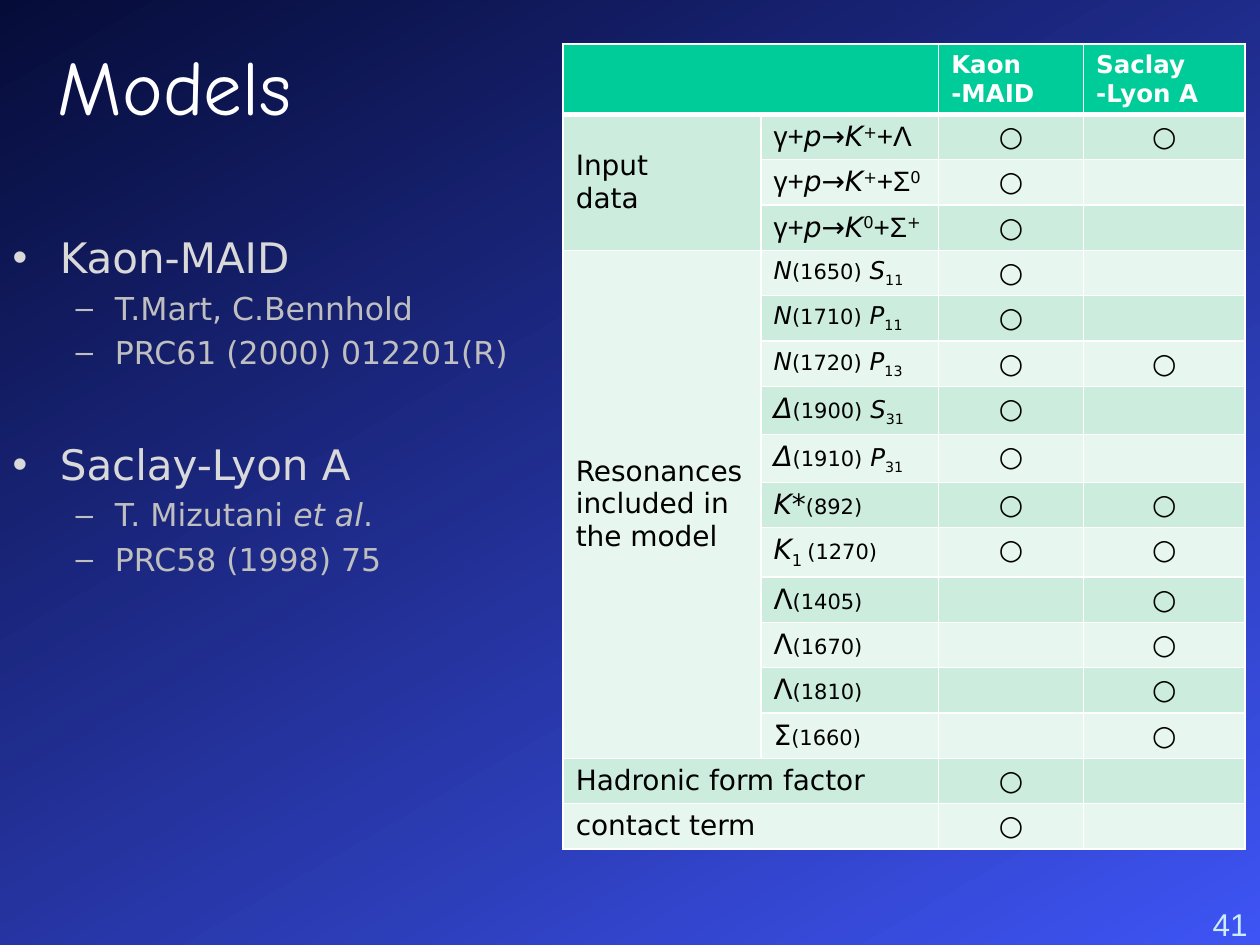
"""Build a slide that compares the inputs of two kaon models."""
from typing import NamedTuple

from lxml.etree import SubElement
from pptx import Presentation
from pptx.dml.color import RGBColor
from pptx.enum.text import MSO_ANCHOR, MSO_AUTO_SIZE, PP_ALIGN
from pptx.oxml.ns import qn
from pptx.util import Inches, Pt

SANS = "DejaVu Sans"
BLACK, WHITE = "000000", "FFFFFF"
HEAD, DARK, LIGHT = "00CC99", "CCECDE", "E7F6EF"
WIDTHS = [1.57, 1.41, 1.15, 1.28]
LOW = 0.36


class Run(NamedTuple):
    text: str
    size: int = 16
    slant: bool = False
    base: int = 0
    font: str = SANS
    color: str = BLACK
    bold: bool = False


class Row(NamedTuple):
    runs: list[Run]
    marks: str
    high: float = LOW


class Item(NamedTuple):
    level: int
    runs: list[Run]
    gap: float | None = None


def paint(target, color: str) -> None:
    target.rgb = RGBColor.from_string(color)


def write(para, runs: list[Run]) -> None:
    for part in runs:
        run = para.add_run()
        run.text = part.text
        font = run.font
        font.size, font.name = Pt(part.size), part.font
        font.italic, font.bold = part.slant, part.bold
        paint(font.color, part.color)
        if part.base:
            font._element.set("baseline", str(part.base * 1000))


def place(shape, left: float, top: float, width: float, height: float) -> None:
    shape.left, shape.top = Inches(left), Inches(top)
    shape.width, shape.height = Inches(width), Inches(height)


def style(cell, color: str, under: int) -> None:
    props = cell._tc.get_or_add_tcPr()
    for side, width in (("L", 1), ("R", 1), ("T", 1), ("B", under)):
        line = SubElement(props, qn(f"a:ln{side}"), w=str(Pt(width)))
        fill = SubElement(line, qn("a:solidFill"))
        SubElement(fill, qn("a:srgbClr"), val=WHITE)
    cell.fill.solid()
    paint(cell.fill.fore_color, color)
    end = cell.text_frame.paragraphs[0]._p.get_or_add_endParaRPr()
    end.set("sz", "1400")


def fill_cell(cell, lines: list[list[Run]], align=PP_ALIGN.LEFT) -> None:
    frame = cell.text_frame
    for num, runs in enumerate(lines):
        para = frame.add_paragraph() if num else frame.paragraphs[0]
        para.alignment = align
        write(para, runs)


def decay(kaon: str, name: str, charge: str = "") -> list[Run]:
    runs = [Run("γ+", font="Arial"), Run("p", slant=True), Run("→"),
            Run("K", slant=True), Run(kaon, base=30), Run("+" + name, font="Arial")]
    return runs + [Run(charge, base=30)] if charge else runs


def state(name: str, mass: str, wave: str, sub: str, size: int = 14) -> list[Run]:
    return [Run(name, size, True), Run(f"({mass})", 12), Run(" ", 14),
            Run(wave, 14, True), Run(sub, 14, base=-25)]


def heavy(name: str, mass: str) -> list[Run]:
    return [Run(name), Run(f"({mass})", 12)]


ROWS = [
    Row(decay("+", "Λ"), "○○"),
    Row(decay("+", "Σ", "0"), "○ "),
    Row(decay("0", "Σ", "+"), "○ "),
    Row(state("N", "1650", "S", "11"), "○ "),
    Row(state("N", "1710", "P", "11"), "○ "),
    Row(state("N", "1720", "P", "13"), "○○"),
    Row(state("Δ", "1900", "S", "31", 16), "○ ", 0.38),
    Row(state("Δ", "1910", "P", "31", 16), "○ ", 0.38),
    Row([Run("K", slant=True), Run("*"), Run("(892)", 12)], "○○"),
    Row([Run("K", slant=True), Run("1 ", base=-25), Run("(1270)", 12)], "○○", 0.39),
    Row(heavy("Λ", "1405"), " ○"),
    Row(heavy("Λ", "1670"), " ○"),
    Row(heavy("Λ", "1810"), " ○"),
    Row(heavy("Σ", "1660"), " ○"),
    Row([], "○ "),
    Row([], "○ "),
]
GROUPS = [
    ((0, 0), (0, 1), []),
    ((1, 0), (3, 0), ["Input", "data"]),
    ((4, 0), (14, 0), ["Resonances", "included in the model"]),
    ((15, 0), (15, 1), ["Hadronic form factor"]),
    ((16, 0), (16, 1), ["contact term"]),
]


def add_grid(slide) -> None:
    highs = [0.55] + [row.high for row in ROWS]
    grid = slide.shapes.add_table(
        len(highs), len(WIDTHS), Inches(4.47), Inches(0.35),
        Inches(sum(WIDTHS)), Inches(sum(highs))).table
    grid.horz_banding = False
    for col, width in zip(grid.columns, WIDTHS):
        col.width = Inches(width)
    for num, high in enumerate(highs):
        grid.rows[num].height = Inches(high)
        color = (DARK if num % 2 else LIGHT) if num else HEAD
        for cell in grid.rows[num].cells:
            style(cell, color, 1 if num else 3)
    for first, last, lines in GROUPS:
        cell = grid.cell(*first)
        cell.merge(grid.cell(*last))
        fill_cell(cell, [[Run(line)] for line in lines])
        if last[0] > first[0]:
            cell.vertical_anchor = MSO_ANCHOR.MIDDLE
    for col, lines in enumerate((["Kaon", "-MAID"], ["Saclay", "-Lyon A"]), 2):
        fill_cell(grid.cell(0, col),
                  [[Run(line, 14, color=WHITE, bold=True)] for line in lines])
    for num, row in enumerate(ROWS, 1):
        if row.runs:
            fill_cell(grid.cell(num, 1), [row.runs])
        for col, mark in enumerate(row.marks, 2):
            if mark.strip():
                fill_cell(grid.cell(num, col), [[Run(mark)]], PP_ALIGN.CENTER)


def model(text: str) -> list[Run]:
    return [Run(text, 24, color="D9D9D9")]


def cite(text: str, slant: bool = False) -> Run:
    return Run(text, 18, slant, color="BFBFBF")


ITEMS = [
    Item(0, model("Kaon-MAID"), 0),
    Item(1, [cite("T.Mart, C.Bennhold")]),
    Item(1, [cite("PRC61 (2000) 012201(R)")]),
    Item(0, model("Saclay-Lyon A"), 39),
    Item(1, [cite("T. Mizutani "), cite("et al", True), cite(".")]),
    Item(1, [cite("PRC58 (1998) 75")]),
]


def add_list(body) -> None:
    place(body, 0, 1.79, 4.37, 3.31)
    frame = body.text_frame
    frame.auto_size = MSO_AUTO_SIZE.NONE
    for num, item in enumerate(ITEMS):
        para = frame.add_paragraph() if num else frame.paragraphs[0]
        para.level = item.level
        if item.gap is not None:
            para.space_before = Pt(item.gap)
        write(para, item.runs)


def main() -> None:
    deck = Presentation()
    deck.slide_width, deck.slide_height = Inches(10), Inches(7.5)
    slide = deck.slides.add_slide(deck.slide_layouts[1])
    back = slide.background.fill
    back.gradient()
    back.gradient_angle = 300
    for stop, color in zip(back.gradient_stops, ("060C38", "3E54F4")):
        paint(stop.color, color)
    title = slide.shapes.title
    place(title, 0.36, 0.11, 3.15, 1.13)
    para = title.text_frame.paragraphs[0]
    para.alignment = PP_ALIGN.LEFT
    write(para, [Run("Models", 44, font="Comic Neue", color=WHITE)])
    add_list(slide.placeholders[1])
    add_grid(slide)
    box = slide.shapes.add_textbox(
        Inches(8.78), Inches(7.13), Inches(1.22), Inches(0.37))
    box.text_frame.word_wrap = True
    para = box.text_frame.paragraphs[0]
    para.alignment = PP_ALIGN.RIGHT
    write(para, [Run("41", 18, font="Arial", color="CCECFF")])
    deck.save("out.pptx")


if __name__ == "__main__":
    main()
